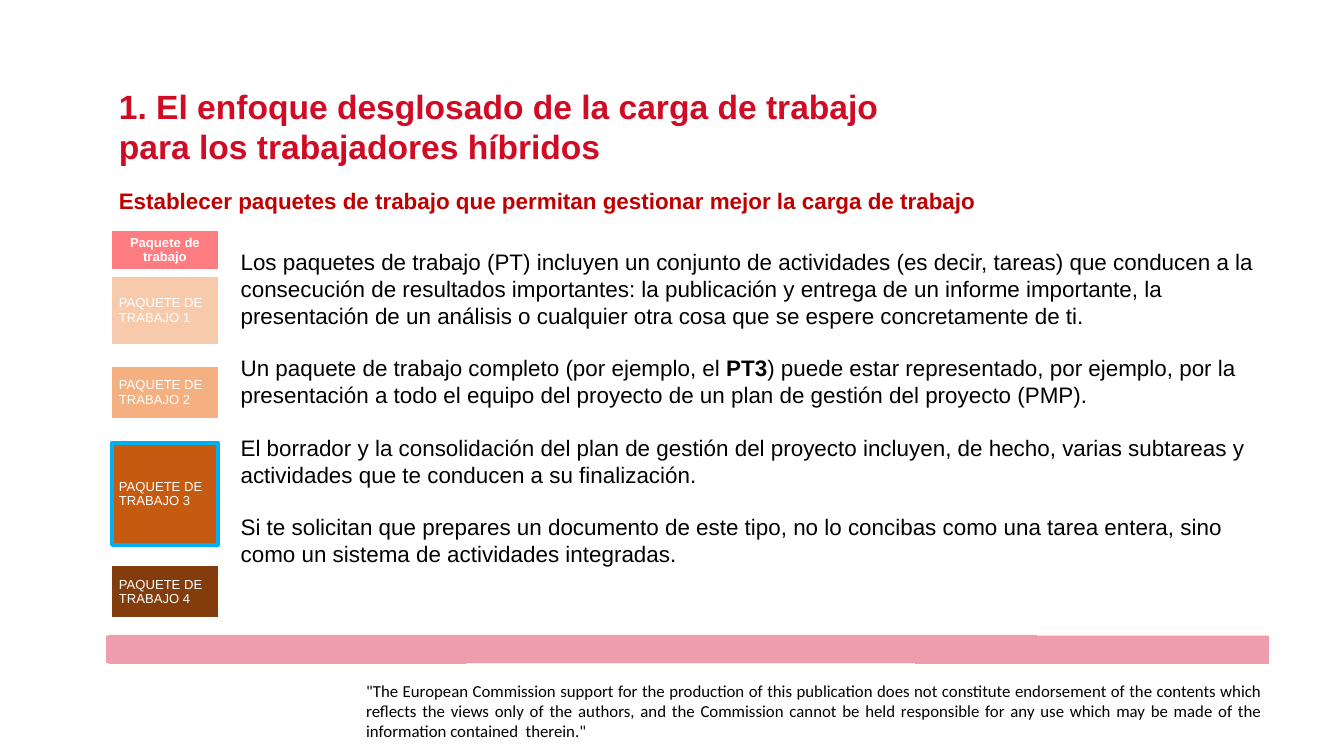
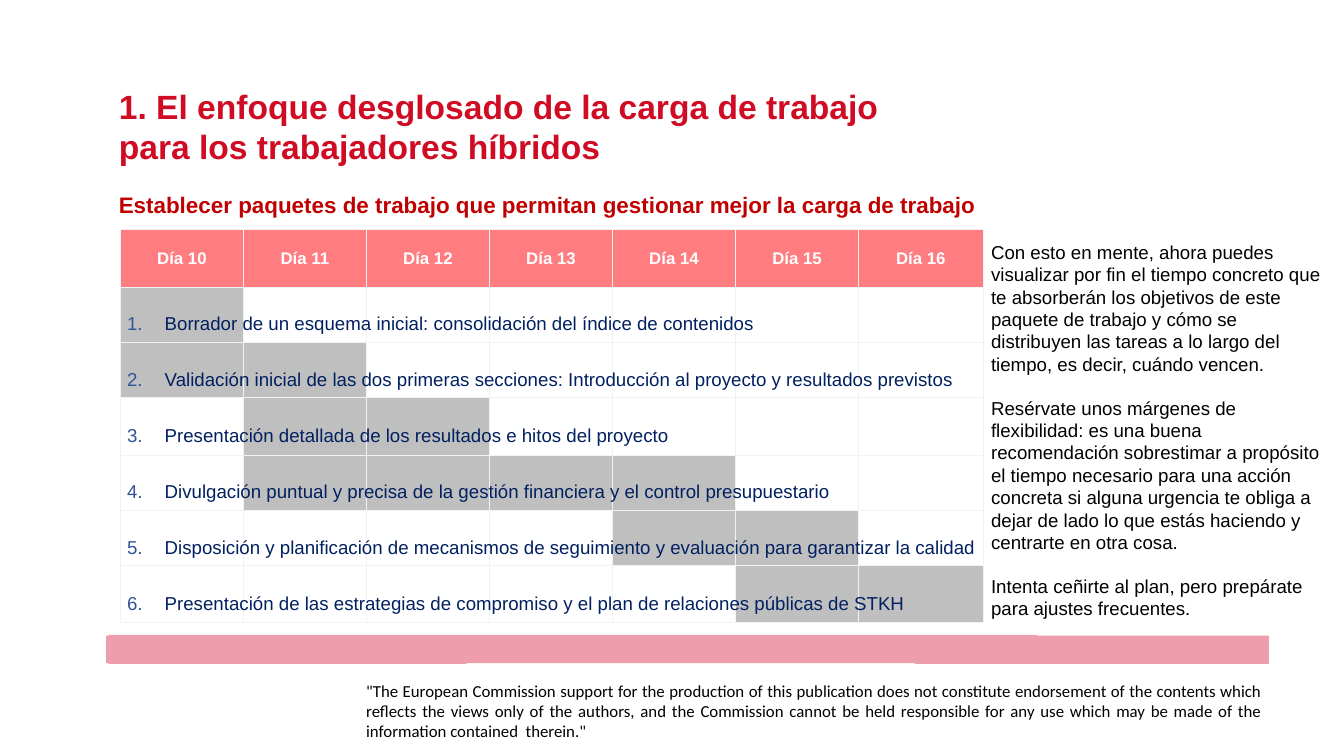
from lxml import etree
from pptx import Presentation
from pptx.dml.color import RGBColor
from pptx.enum import shapes as sh, text as tx
from pptx.oxml import ns
from pptx.util import Cm, Pt

# Colours
RED = RGBColor(0xD0, 0x0B, 0x24)
DARK = RGBColor(0xC0, 0x00, 0x00)
CORAL = RGBColor(0xFF, 0x7C, 0x80)
PINK = RGBColor(0xED, 0x9D, 0xAB)
NAVY = RGBColor(0x00, 0x20, 0x60)
BLUE = RGBColor(0x2F, 0x54, 0x96)
SKY = RGBColor(0x00, 0xB0, 0xF0)
GREY = RGBColor(0xBF, 0xBF, 0xBF)
PALE = RGBColor(0xF2, 0xF2, 0xF2)
BLACK = RGBColor(0x00, 0x00, 0x00)
WHITE = RGBColor(0xFF, 0xFF, 0xFF)

# Shared texts
TITLE = "1. El enfoque desglosado de la carga de trabajo para los trabajadores híbridos"
THEME = "Establecer paquetes de trabajo que permitan gestionar mejor la carga de trabajo"
NOTE = (
    '"The European Commission support for the production of this publication does not '
    "constitute endorsement of the contents which reflects the views only of the authors, "
    "and the Commission cannot be held responsible for any use which may be made of the "
    'information contained  therein."'
)

# Slide 1: words between ** are bold
INTRO = [
    "Los paquetes de trabajo (PT) incluyen un conjunto de actividades (es decir, tareas) "
    "que conducen a la consecución de resultados importantes: la publicación y entrega de "
    "un informe importante, la presentación de un análisis o cualquier otra cosa que se "
    "espere concretamente de ti.",
    "Un paquete de trabajo completo (por ejemplo, el **PT3**) puede estar representado, por "
    "ejemplo, por la presentación a todo el equipo del proyecto de un plan de gestión del "
    "proyecto (PMP).",
    "El borrador y la consolidación del plan de gestión del proyecto incluyen, de hecho, "
    "varias subtareas y actividades que te conducen a su finalización.",
    "Si te solicitan que prepares un documento de este tipo, no lo concibas como una tarea "
    "entera, sino como un sistema de actividades integradas.",
]
PACK_FILLS = ["F7CAAC", "F4B081", "C55A11", "833C0B"]
PACK_ROWS = [1.42, 0.3, 2.54, 0.86, 1.93, 0.94, 3.89, 0.79, 1.93]

# Slide 2
ADVICE = [
    "Con esto en mente, ahora puedes visualizar por fin el tiempo concreto que te "
    "absorberán los objetivos de este paquete de trabajo y cómo se distribuyen las tareas "
    "a lo largo del tiempo, es decir, cuándo vencen.",
    "Resérvate unos márgenes de flexibilidad: es una buena recomendación sobrestimar a "
    "propósito el tiempo necesario para una acción concreta si alguna urgencia te obliga a "
    "dejar de lado lo que estás haciendo y centrarte en otra cosa.",
    "Intenta ceñirte al plan, pero prepárate para ajustes frecuentes.",
]
# Each task with its first and last day
TASKS = [
    ("Borrador de un esquema inicial: consolidación del índice de contenidos", 10, 10),
    ("Validación inicial de las dos primeras secciones: Introducción al proyecto y "
     "resultados previstos", 10, 11),
    ("Presentación detallada de los resultados e hitos del proyecto", 11, 12),
    ("Divulgación puntual y precisa de la gestión financiera y el control "
     "presupuestario", 11, 14),
    ("Disposición y planificación de mecanismos de seguimiento y evaluación para "
     "garantizar la calidad", 14, 15),
    ("Presentación de las estrategias de compromiso y el plan de relaciones públicas "
     "de STKH", 15, 16),
]
DAYS = range(10, 17)
DAY_COLS = [4.65] * 6 + [4.71]
DAY_ROWS = [2.2, 2.08, 2.08, 2.18, 2.08, 2.08, 2.18]


def add_tag(parent, name, **attrs):
    return etree.SubElement(parent, ns.qn(name), attrs)


def style(para, size, color, bold=False, font="Arial"):
    for run in para.runs:
        run.font.size, run.font.name = Pt(size), font
        run.font.color.rgb = color
        run.font.bold = bold


def place(shape, left, top, width, height):
    shape.left, shape.top = Cm(left), Cm(top)
    shape.width, shape.height = Cm(width), Cm(height)


def write(frame, paras, size, color, bold=False, gap=0):
    """Fill a frame with left-aligned paragraphs, gap points apart."""
    frame.word_wrap = True
    frame.auto_size = tx.MSO_AUTO_SIZE.NONE
    frame.vertical_anchor = tx.MSO_ANCHOR.TOP
    for i, words in enumerate(paras):
        para = frame.paragraphs[0] if i == 0 else frame.add_paragraph()
        para.alignment = tx.PP_ALIGN.LEFT
        para.space_before = Pt(gap if i else 0)
        for j, part in enumerate(words.split("**")):
            para.add_run().text = part
            para.runs[j].font.bold = j % 2 == 1
        marks = [run.font.bold for run in para.runs]
        style(para, size, color)
        for run, mark in zip(para.runs, marks):
            run.font.bold = bold or mark


def add_text(slide, box, paras, size, color, bold=False, gap=0):
    label = slide.shapes.add_textbox(*map(Cm, box))
    write(label.text_frame, paras, size, color, bold, gap)


def set_list(para, numbered):
    """Number a paragraph, or take its bullet away."""
    props = para._p.get_or_add_pPr()
    inset = Cm(1.42) if numbered else 0
    props.set("marL", str(inset))
    props.set("indent", str(-inset))
    if numbered:
        add_tag(add_tag(props, "a:buClr"), "a:srgbClr", val=str(BLUE))
        add_tag(props, "a:buAutoNum", type="arabicPeriod")
    else:
        add_tag(props, "a:buNone")


def add_grid(slide, left, top, cols, rows):
    """Add a table without style, its cells white and empty."""
    frame = slide.shapes.add_table(
        len(rows), len(cols), Cm(left), Cm(top), Cm(sum(cols)), Cm(sum(rows)))
    grid = frame.table
    grid.first_row = grid.horz_banding = False
    grid._tbl.tblPr.find(ns.qn("a:tableStyleId")).text = (
        "{2D5ABB26-0587-4C30-8999-92F81FD0307C}")
    for col, width in zip(grid.columns, cols):
        col.width = Cm(width)
    for row, height in zip(grid.rows, rows):
        row.height = Cm(height)
    for cell in grid.iter_cells():
        paint(cell, WHITE)
        cell.margin_top = cell.margin_bottom = 0
        add_tag(cell.text_frame.paragraphs[0]._p, "a:endParaRPr", sz="100")
    return grid


def paint(cell, color):
    cell.fill.solid()
    cell.fill.fore_color.rgb = color


def fill_cell(cell, words, color, size, bold, align):
    paint(cell, color)
    cell.vertical_anchor = tx.MSO_ANCHOR.MIDDLE
    cell.margin_top = cell.margin_bottom = Cm(0.13)
    para = cell.text_frame.paragraphs[0]
    para.text = words
    para.alignment = align
    style(para, size, WHITE, bold)


def add_edges(cell):
    props = cell._tc.get_or_add_tcPr()
    for i, side in enumerate("LRTB"):
        line = etree.Element(ns.qn("a:ln" + side), w=str(Pt(1)))
        add_tag(add_tag(line, "a:solidFill"), "a:srgbClr", val=str(PALE))
        props.insert(i, line)


def add_base(prs, slide):
    """Draw the band and the note, then hand them to the master."""
    # Band, in hundredths of a centimetre
    draw = slide.shapes.build_freeform(4796, 2403, scale=Cm(0.01))
    draw.add_line_segments([
        (3919, 2403), (3919, 2400), (411, 2400), (411, 2403), (401, 2403),
        (401, 2507), (411, 2507), (411, 2510), (1763, 2510), (1763, 2507),
        (3459, 2507), (3459, 2510), (4796, 2510)])
    band = draw.convert_to_shape()
    band.shadow.inherit = False
    band.fill.solid()
    band.fill.fore_color.rgb = PINK
    band.line.fill.background()

    # Note
    note = slide.shapes.add_textbox(Cm(13.84), Cm(25.78), Cm(33.86), Cm(1.93))
    frame = note.text_frame
    frame.word_wrap = True
    frame.margin_left = frame.margin_right = 0
    frame.margin_top = frame.margin_bottom = 0
    para = frame.paragraphs[0]
    para.text = NOTE
    para.alignment = tx.PP_ALIGN.JUSTIFY
    para.line_spacing = 0.98
    style(para, 18, BLACK, font="Calibri")

    for shape in (band, note):
        prs.slide_master.shapes._spTree.append(shape._element)


def add_slide(prs):
    slide = prs.slides.add_slide(prs.slide_layouts[1])
    title = slide.shapes.title
    place(title, 4.24, 3.12, 31.52, 3.33)
    write(title.text_frame, [TITLE], 36, RED, bold=True)
    return slide, slide.placeholders[1]


def add_packs(slide):
    """Stack the work packages, with blank rows between them."""
    grid = add_grid(slide, 4.24, 8.74, [3.99, 0.61], PACK_ROWS)
    grid.cell(0, 1).merge(grid.cell(len(PACK_ROWS) - 1, 1))
    fill_cell(grid.cell(0, 0), "Paquete de trabajo", CORAL, 14, True, tx.PP_ALIGN.CENTER)
    for i, code in enumerate(PACK_FILLS, 1):
        fill_cell(grid.cell(2 * i, 0), f"PAQUETE DE TRABAJO {i}",
                  RGBColor.from_string(code), 14, False, tx.PP_ALIGN.LEFT)

    # Frame around package 3
    frame = slide.shapes.add_shape(
        sh.MSO_SHAPE.RECTANGLE, Cm(4.24), Cm(16.74), Cm(3.99), Cm(3.86))
    frame.shadow.inherit = False
    frame.fill.background()
    frame.line.color.rgb = SKY
    frame.line.width = Pt(4.5)


def add_plan(slide):
    """Chart the tasks by day."""
    grid = add_grid(slide, 4.55, 8.66, DAY_COLS, DAY_ROWS)
    for col, day in enumerate(DAYS):
        fill_cell(grid.cell(0, col), f"Día {day}", CORAL, 18, True, tx.PP_ALIGN.CENTER)
        for row, (_, first, last) in enumerate(TASKS, 1):
            if first <= day <= last:
                paint(grid.cell(row, col), GREY)
    for cell in grid.iter_cells():
        add_edges(cell)


def main():
    prs = Presentation()
    prs.slide_width, prs.slide_height = Cm(50.8), Cm(28.58)

    # Slide 1: work packages
    slide, body = add_slide(prs)
    add_base(prs, slide)
    place(body, 8.84, 8.23, 39.73, 14.63)
    write(body.text_frame, INTRO, 24, BLACK, gap=27.6)
    body.text_frame.margin_top = Cm(1.14)
    for para in body.text_frame.paragraphs:
        set_list(para, numbered=False)
    add_packs(slide)
    add_text(slide, (4.24, 6.96, 35.79, 1.27), [THEME], 24, DARK, bold=True)

    # Slide 2: tasks over time
    slide, body = add_slide(prs)
    add_text(slide, (4.24, 7.11, 43.46, 1.27), [THEME], 24, DARK, bold=True)
    add_text(slide, (37.21, 8.97, 13.21, 14.78), ADVICE, 20, BLACK, gap=23)
    add_plan(slide)
    place(body, 4.55, 10.41, 32.99, 13.08)
    write(body.text_frame, [task[0] for task in TASKS], 20, NAVY)
    for para in body.text_frame.paragraphs:
        para.line_spacing = 2.5
        set_list(para, numbered=True)
    slide.shapes._spTree.append(body._element)  # the list lies over the plan

    prs.save("out.pptx")


if __name__ == "__main__":
    main()
